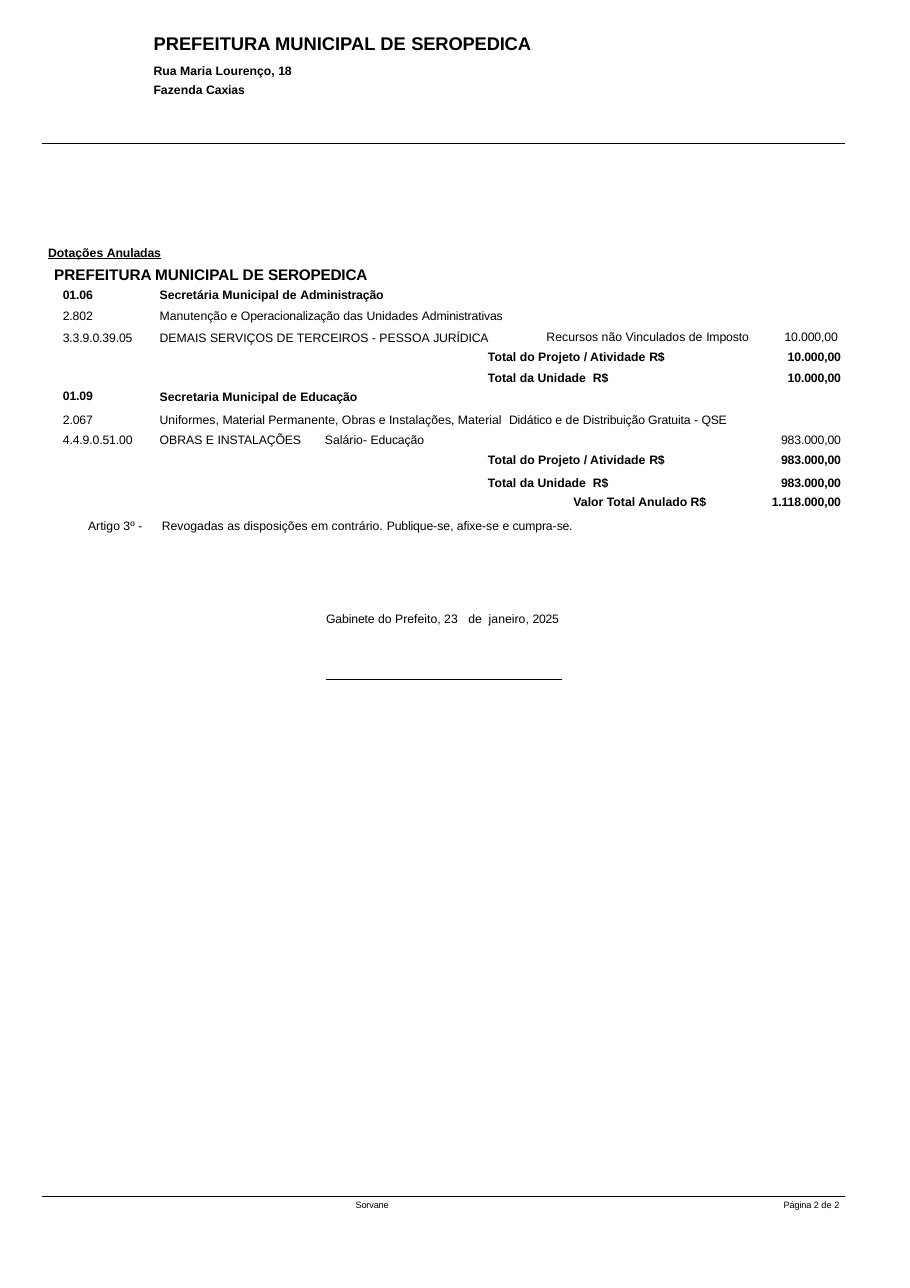
from lxml.etree import SubElement
from pptx import Presentation
from pptx.dml.color import RGBColor as Rgb
from pptx.enum.shapes import MSO_CONNECTOR as Link
from pptx.enum.text import MSO_ANCHOR as Anchor, MSO_AUTO_SIZE as Fit, PP_ALIGN as Align
from pptx.oxml.ns import qn
from pptx.util import Cm, Pt

INK = {"text": "000000", "rule": "000000"}
FONT = "Arial"
WIDE = 18.52
CITY = ["PREFEITURA MUNICIPAL DE ", ("SEROPEDICA", -0.1)]
ACT = ["Total do Projeto / Atividade ", ("R$", -0.2)]
UNIT = ["Total da Unidade", (" ", 2.2), ("R$", -0.2)]


def write(par, runs, size=8, bold=False, line=False, gap=0, left=0, align=Align.LEFT, tab=None):
    par.alignment = align
    par.line_spacing = 1.0
    par.space_before = Pt(gap)
    props = par._p.get_or_add_pPr()
    props.set("marL", str(Cm(left)))
    props.set("indent", "0")
    if tab:
        tabs = SubElement(props, qn("a:tabLst"))
        SubElement(tabs, qn("a:tab"), pos=str(Cm(tab)), algn="l")
    for part in runs:
        text, space = (part, 0) if isinstance(part, str) else part
        run = par.add_run()
        run.text = text
        font = run.font
        font.name, font.size, font.bold = FONT, Pt(size), bold
        font.underline = line
        font.color.rgb = Rgb.from_string(INK["text"])
        run._r.get_or_add_rPr().set("spc", str(round(space * 100)))


def stack(frame, pars):
    for num, (runs, look) in enumerate(pars):
        par = frame.paragraphs[0] if num == 0 else frame.add_paragraph()
        write(par, runs, **look)


def clear(frame):
    frame.margin_left = frame.margin_right = frame.margin_top = frame.margin_bottom = 0
    frame.vertical_anchor = Anchor.TOP
    frame.auto_size = Fit.NONE
    frame.word_wrap = True


def label(slide, x, y, w, h, *pars):
    box = slide.shapes.add_textbox(Cm(x), Cm(y), Cm(w), Cm(h))
    clear(box.text_frame)
    stack(box.text_frame, pars)


def rule(slide, x, y, w):
    line = slide.shapes.add_connector(Link.STRAIGHT, Cm(x), Cm(y), Cm(x + w), Cm(y))
    line.line.color.rgb = Rgb.from_string(INK["rule"])
    line.line.width = Pt(0.75)
    SubElement(line._element.spPr, qn("a:effectLst"))


def head(slide, x, y, w):
    title = slide.shapes.title
    title.left, title.top, title.width, title.height = Cm(x + 2.57), Cm(y), Cm(9), Cm(0.6)
    clear(title.text_frame)
    write(title.text_frame.paragraphs[0], CITY, size=12, bold=True)
    label(slide, x + 2.57, y + 0.73, 6, 0.9,
          (["Rua Maria Lourenço,", (" 18", -0.2)], {"bold": True}),
          (["Fazenda ", ("Caxias", -0.1)], {"bold": True, "gap": 2.6}))
    rule(slide, x, y + 2.57, w)


def intro(slide, x, y):
    label(slide, x, y, 9, 1,
          (["Dotações", (" ", -0.5), ("Anuladas", -0.1)],
           {"bold": True, "line": True, "left": 0.02}),
          (CITY, {"size": 10, "bold": True, "gap": 3.7, "left": 0.16}))
    codes = [[("01.06", -0.1)], [("2.802", -0.1)], [("3.3.9.0.39.05", -0.1)]]
    names = [
        ["Secretária Municipal de ", ("Administração", -0.1)],
        ["Manutenção e ", ("Operacionalização ", -0.1), "das Unidades ",
         ("Administrativas", -0.1)],
        ["DEMAIS SERVIÇOS DE TERCEIROS - PESSOA ", ("JURÍDICA", -0.1)],
    ]
    for left, wide, texts in ((0.36, 2.2, codes), (2.59, 9, names)):
        looks = [{"bold": num == 0, "gap": 4.5 if num else 0} for num in range(3)]
        label(slide, x + left, y + 0.97, wide, 1.6, *zip(texts, looks))
    label(slide, x + 11.51, y + 1.94, 5.2, 0.4,
          (["Recursos não Vinculados de ", ("Imposto", -0.1)], {}))
    label(slide, x + 17, y + 1.94, 1.6, 0.4, ([("10.000,00", -0.1)], {}))


def code(text, **look):
    return [([(text, -0.1)], {"left": 0.08, **look})]


def total(runs):
    return runs, {"bold": True, "left": 7.77}


def value(text, bold=True):
    return [([(text, -0.1)], {"bold": bold, "align": Align.RIGHT})]


def grid(slide, x, y):
    unit = ["Secretaria Municipal de ", ("Educação", -0.1)]
    goods = ["Uniformes, ", ("Material ", -0.1), "Permanente, Obras e Instalações, Material",
             (" ", 2.2), ("Didático ", -0.1), "e de ", ("Distribuição Gratuita ", -0.1),
             "- ", ("QSE", -0.2)]
    works = ["OBRAS E ", ("INSTALAÇÕES", -0.1), "\tSalário- ", ("Educação", -0.1)]
    grand = ["Valor Total Anulado", (" R$", -0.2)]
    close = ["Revogadas as disposições em contrário. ", ("Publique-", -0.1), "se,",
             (" afixe-", -0.1), "se e", (" cumpra-", -0.1), ("se.", -0.2)]
    rows = [
        (0.41, 0, [], [total(ACT)], value("10.000,00")),
        (0.97, 0.07, code("01.09", bold=True),
         [total(UNIT), (unit, {"bold": True, "left": 0.2, "gap": 3.1})], value("10.000,00")),
        (0.48, 0.06, code("2.067"), [(goods, {"left": 0.2})], []),
        (0.48, 0.04, code("4.4.9.0.51.00"), [(works, {"left": 0.2, "tab": 9.14})],
         value("983.000,00", False)),
        (0.48, 0.04, [], [total(ACT)], value("983.000,00")),
        (0.48, 0.07, [], [total(UNIT)], value("983.000,00")),
        (0.51, 0.04, [], [(grand, {"bold": True, "align": Align.RIGHT})], value("1.118.000,00")),
        (0.43, 0.08, [(["Artigo 3º ", ("-", -0.5)], {"left": 0.66})],
         [(close, {"left": 0.25})], []),
    ]
    cols = [2.11, 13.79, 2.16]
    high = sum(row[0] for row in rows)
    table = slide.shapes.add_table(len(rows), 3, Cm(x), Cm(y), Cm(sum(cols)), Cm(high)).table
    table.first_row = table.horz_banding = False
    for col, wide in zip(table.columns, cols):
        col.width = Cm(wide)
    for row, (tall, top, *cells) in zip(table.rows, rows):
        row.height = Cm(tall)
        for cell, pars in zip(row.cells, cells):
            cell.fill.background()
            cell.margin_left = cell.margin_right = cell.margin_bottom = 0
            cell.margin_top = Cm(top)
            stack(cell.text_frame, pars)
            if not pars:
                SubElement(cell.text_frame.paragraphs[0]._p, qn("a:endParaRPr"), sz="800")
        row.cells[2].margin_right = Cm(0.04)
    table.cell(1, 0).margin_top = Cm(0.49)
    table.cell(6, 1).margin_right = Cm(0.99)


def sign(slide, x, y, w):
    label(slide, x, y, w + 0.3, 0.4,
          ([("Gabinete ", -0.1), "do Prefeito, 23", (" ", 4.4), "de", (" ", 2.2),
            "janeiro, ", ("2025", -0.2)], {}))
    rule(slide, x, y + 1.58, w)


def foot(slide, x, y, w):
    rule(slide, x, y, w)
    label(slide, x + 7.23, y + 0.06, 1.5, 0.3, ([("Sorvane", -0.1)], {"size": 6}))
    label(slide, x + 17.1, y + 0.06, 1.5, 0.3,
          ([("Página ", -0.1), "2 de ", ("2", -0.5)], {"size": 6}))


def main():
    deck = Presentation()
    deck.slide_width, deck.slide_height = Cm(20.98), Cm(29.69)
    slide = deck.slides.add_slide(deck.slide_layouts[5])
    head(slide, 0.97, 0.74, WIDE)
    intro(slide, 1.09, 5.65)
    grid(slide, 1.37, 8.08)
    sign(slide, 7.52, 14.09, 5.44)
    foot(slide, 0.97, 27.58, WIDE)
    deck.save("out.pptx")


if __name__ == "__main__":
    main()
